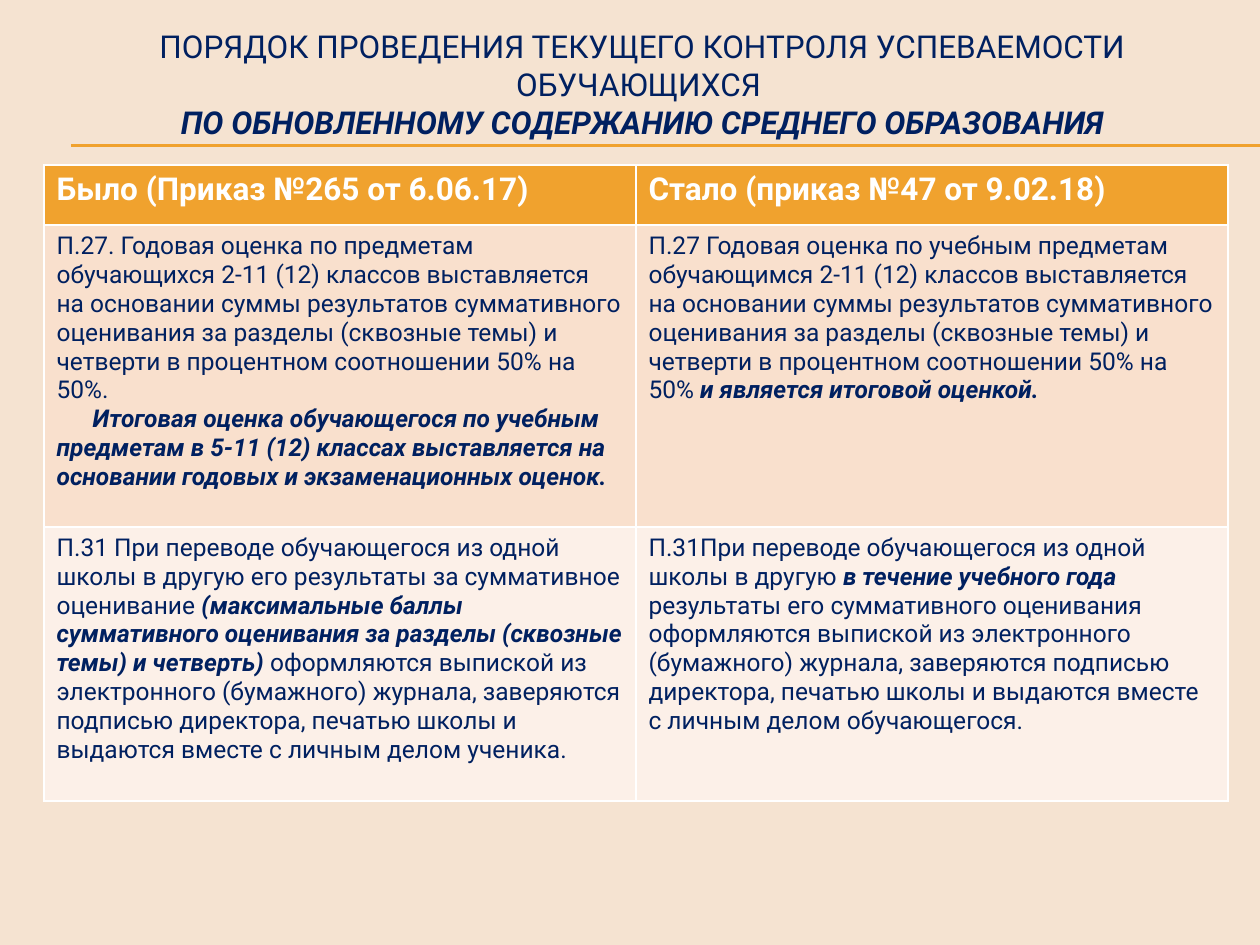
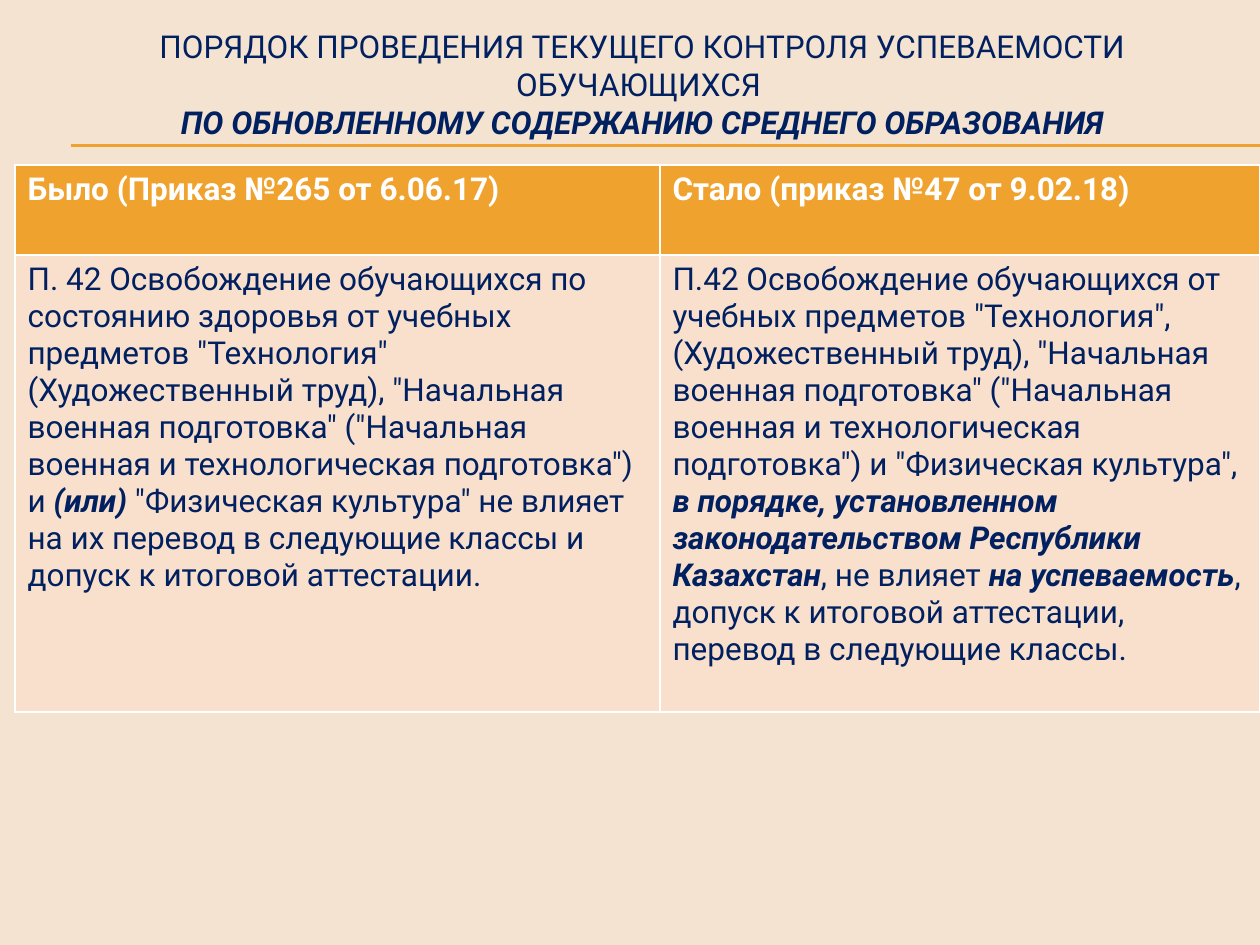
from dataclasses import dataclass

from pptx import Presentation
from pptx.dml.color import RGBColor
from pptx.enum.shapes import MSO_CONNECTOR
from pptx.enum.text import MSO_ANCHOR, PP_ALIGN
from pptx.oxml.ns import qn
from pptx.util import Emu, Pt
from lxml import etree

STRAIGHT = MSO_CONNECTOR.STRAIGHT
MIDDLE = MSO_ANCHOR.MIDDLE
CENTER = PP_ALIGN.CENTER

EMU_PER_PX = 914400 / 126
SLIDE_WIDTH, SLIDE_HEIGHT = 1260, 945
TITLE_BOX = (44, 26, 1197, 116)
RULE_LEFT = 71
RULE_TOPS = (145, 146)
TABLE_TOP = 165
FIRST_LINE_INDENT = 36
TITLE_ONLY_LAYOUT = 5


@dataclass(frozen=True)
class Theme:
    font: str = "Roboto"
    background: RGBColor = RGBColor(0xF5, 0xE3, 0xD1)
    accent: RGBColor = RGBColor(0xF0, 0xA2, 0x2E)
    ink: RGBColor = RGBColor(0x00, 0x20, 0x60)
    header_ink: RGBColor = RGBColor(0xFF, 0xFF, 0xFF)
    bands: tuple = (RGBColor(0xF9, 0xE0, 0xCD), RGBColor(0xFC, 0xF0, 0xE8))
    heading_size: int = 18
    compact_size: int = 14
    rule_width: float = 0.75


THEME = Theme()

TITLE = (
    "ПОРЯДОК ПРОВЕДЕНИЯ ТЕКУЩЕГО КОНТРОЛЯ УСПЕВАЕМОСТИ ОБУЧАЮЩИХСЯ ",
    "ПО ОБНОВЛЕННОМУ СОДЕРЖАНИЮ СРЕДНЕГО ОБРАЗОВАНИЯ",
)
HEADERS = ("Было (Приказ №265 от 6.06.17)", "Стало (приказ №47 от 9.02.18)")

# Each paragraph alternates plain and emphasised text.
GRADES_AND_TRANSFER = [
    [
        [
            ["П.27. Годовая оценка по предметам обучающихся 2-11 (12) классов "
             "выставляется на основании суммы результатов суммативного оценивания "
             "за разделы (сквозные темы) и четверти в процентном соотношении "
             "50% на 50%."],
            ["",
             "Итоговая оценка обучающегося по учебным предметам в 5-11 (12) классах "
             "выставляется на основании годовых и экзаменационных оценок."],
        ],
        [
            ["П.27 Годовая оценка по учебным предметам обучающимся 2-11 (12) классов "
             "выставляется на основании суммы результатов суммативного оценивания "
             "за разделы (сквозные темы) и четверти в процентном соотношении "
             "50% на 50% ",
             "и является итоговой оценкой."],
        ],
    ],
    [
        [
            ["П.31 При переводе обучающегося из одной школы в другую его результаты "
             "за суммативное оценивание ",
             "(максимальные баллы суммативного оценивания за разделы "
             "(сквозные темы) и четверть) ",
             "оформляются выпиской из электронного (бумажного) журнала, заверяются "
             "подписью директора, печатью школы и выдаются вместе с личным делом "
             "ученика."],
        ],
        [
            ["П.31При переводе обучающегося из одной школы в другую ",
             "в течение учебного года ",
             "результаты его суммативного оценивания оформляются выпиской из "
             "электронного (бумажного) журнала, заверяются подписью директора, "
             "печатью школы и выдаются вместе с личным делом обучающегося."],
        ],
    ],
]

EXEMPTIONS = [
    [
        [
            ["П. 42 Освобождение обучающихся по состоянию здоровья от учебных "
             "предметов \"Технология\" (Художественный труд), \"Начальная военная "
             "подготовка\" (\"Начальная военная и технологическая подготовка\") и ",
             "(или) ",
             "\"Физическая культура\" не влияет на их перевод в следующие классы "
             "и допуск к итоговой аттестации."],
        ],
        [
            ["П.42 Освобождение обучающихся от учебных предметов \"Технология\", "
             "(Художественный труд), \"Начальная военная подготовка\" (\"Начальная "
             "военная и технологическая подготовка\") и \"Физическая культура\", ",
             "в порядке, установленном законодательством Республики Казахстан",
             ", не влияет ",
             "на успеваемость",
             ", допуск к итоговой аттестации, перевод в следующие классы."],
        ],
    ],
]


def px(length):
    return Emu(round(length * EMU_PER_PX))


def set_font(paragraph, size, color):
    paragraph.font.name = THEME.font
    paragraph.font.size = Pt(size)
    paragraph.font.color.rgb = color


def add_run(paragraph, text, emphasised):
    run = paragraph.add_run()
    run.text = text
    if emphasised:
        run.font.bold = run.font.italic = True


def fill_title(slide):
    title = slide.shapes.title
    title.left, title.top, title.width, title.height = map(px, TITLE_BOX)
    title.text_frame.vertical_anchor = MIDDLE
    paragraph = title.text_frame.paragraphs[0]
    paragraph.alignment = CENTER
    set_font(paragraph, THEME.heading_size, THEME.ink)
    subject, scope = TITLE
    add_run(paragraph, subject, False)
    paragraph.add_line_break()
    add_run(paragraph, scope, True)


def add_rules(slide):
    for top in RULE_TOPS:
        rule = slide.shapes.add_connector(
            STRAIGHT, px(RULE_LEFT), px(top), px(SLIDE_WIDTH), px(top))
        rule.line.color.rgb = THEME.accent
        rule.line.width = Pt(THEME.rule_width)
        etree.SubElement(rule._element.spPr, qn("a:effectLst"))


def fill_cell(cell, color, paragraphs, size, ink):
    cell.fill.solid()
    cell.fill.fore_color.rgb = color
    frame = cell.text_frame
    for index, segments in enumerate(paragraphs):
        paragraph = frame.add_paragraph() if index else frame.paragraphs[0]
        set_font(paragraph, size, ink)
        if index:
            paragraph._p.get_or_add_pPr().set("indent", str(px(FIRST_LINE_INDENT)))
        for position, text in enumerate(segments):
            if text:
                add_run(paragraph, text, position % 2 == 1)


def add_comparison(slide, left, column_widths, row_heights, body, size):
    table = slide.shapes.add_table(
        len(row_heights), len(column_widths), px(left), px(TABLE_TOP),
        px(sum(column_widths)), px(sum(row_heights))).table
    for column, width in zip(table.columns, column_widths):
        column.width = px(width)
    for row, height in zip(table.rows, row_heights):
        row.height = px(height)
    for column, header in enumerate(HEADERS):
        cell = table.cell(0, column)
        fill_cell(cell, THEME.accent, [[header]], THEME.heading_size, THEME.header_ink)
        cell.text_frame.paragraphs[0].font.bold = True
    for row, (clauses, band) in enumerate(zip(body, THEME.bands), start=1):
        for column, paragraphs in enumerate(clauses):
            fill_cell(table.cell(row, column), band, paragraphs, size, THEME.ink)


def add_comparison_slide(presentation, **comparison):
    slide = presentation.slides.add_slide(
        presentation.slide_layouts[TITLE_ONLY_LAYOUT])
    add_rules(slide)
    fill_title(slide)
    add_comparison(slide, **comparison)


def main():
    presentation = Presentation()
    presentation.slide_width = px(SLIDE_WIDTH)
    presentation.slide_height = px(SLIDE_HEIGHT)
    background = presentation.slide_master.background.fill
    background.solid()
    background.fore_color.rgb = THEME.background
    add_comparison_slide(
        presentation, left=44, column_widths=(592, 592),
        row_heights=(60, 302, 274), body=GRADES_AND_TRANSFER,
        size=THEME.compact_size)
    add_comparison_slide(
        presentation, left=15, column_widths=(645, 600),
        row_heights=(90, 457), body=EXEMPTIONS, size=THEME.heading_size)
    presentation.save("out.pptx")


if __name__ == "__main__":
    main()
